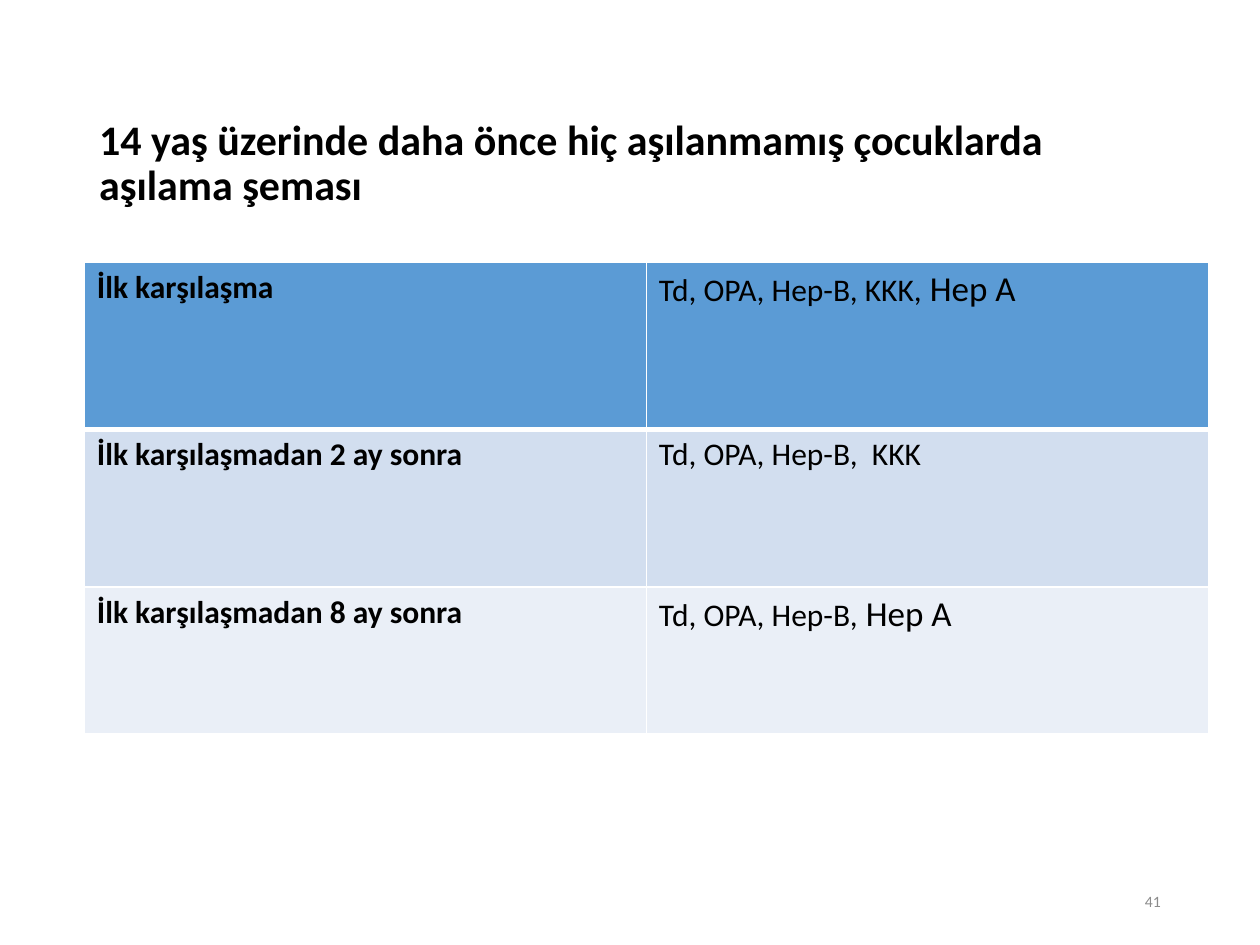
from dataclasses import dataclass

from lxml.etree import SubElement
from pptx import Presentation
from pptx.dml.color import RGBColor
from pptx.enum.text import MSO_ANCHOR, PP_ALIGN
from pptx.oxml.ns import qn
from pptx.util import Cm, Pt


@dataclass(frozen=True)
class Theme:
    """Colours, font and type sizes of the slide."""
    font: str = "Calibri"
    ink: str = "000000"
    muted: str = "8C8C8C"
    rule: str = "FFFFFF"
    row_fills: tuple = ("5B9BD5", "D2DEEF", "EAEFF7")
    title: int = 24
    body: int = 18
    emphasis: int = 20
    footer: int = 9
    thin: int = 1
    thick: int = 3


@dataclass(frozen=True)
class Box:
    """A rectangle in centimetres."""
    left: float
    top: float
    width: float
    height: float

    def lengths(self):
        """Return the four sides as slide lengths."""
        return Cm(self.left), Cm(self.top), Cm(self.width), Cm(self.height)


THEME = Theme()
SCHEDULE = [
    ("İlk karşılaşma", "Td, OPA, Hep-B, KKK,", " Hep A"),
    ("İlk karşılaşmadan 2 ay sonra", "Td, OPA, Hep-B,  KKK", ""),
    ("İlk karşılaşmadan 8 ay sonra", "Td, OPA, Hep-B,", " Hep A"),
]
ROW_HEIGHTS = (3.38, 3.17, 2.97)


def add_run(paragraph, wording, size, color=THEME.ink, bold=False):
    """Append one styled run to a paragraph."""
    run = paragraph.add_run()
    run.text = wording
    run.font.name = THEME.font
    run.font.size = Pt(size)
    run.font.bold = bold
    run.font.color.rgb = RGBColor.from_string(color)


def add_frame(slide, box):
    """Add a wrapping, vertically centred text frame."""
    frame = slide.shapes.add_textbox(*box.lengths()).text_frame
    frame.word_wrap = True
    frame.vertical_anchor = MSO_ANCHOR.MIDDLE
    return frame


def rule_cell(cell, top, bottom):
    """Draw the four borders of a cell, given its top and bottom widths."""
    properties = cell._tc.get_or_add_tcPr()
    widths = {"a:lnL": THEME.thin, "a:lnR": THEME.thin, "a:lnT": top, "a:lnB": bottom}
    for position, (side, width) in enumerate(widths.items()):
        line = SubElement(properties, qn(side), w=str(Pt(width)))
        SubElement(SubElement(line, qn("a:solidFill")), qn("a:srgbClr"), val=THEME.rule)
        properties.insert(position, line)


def add_title(slide, box):
    """Place the heading slightly below the middle of its box."""
    frame = add_frame(slide, box)
    frame.margin_top = Cm(1.04)
    heading = frame.paragraphs[0]
    heading.line_spacing = 0.9
    add_run(heading, "14 yaş üzerinde daha önce hiç aşılanmamış çocuklarda aşılama şeması",
            THEME.title, bold=True)


def add_schedule(slide, box):
    """Place the vaccination table with one row per visit."""
    table = slide.shapes.add_table(len(SCHEDULE), 2, *box.lengths()).table
    for column in table.columns:
        column.width = Cm(box.width / 2)
    for index, (visit, vaccines, extra) in enumerate(SCHEDULE):
        table.rows[index].height = Cm(ROW_HEIGHTS[index])
        visit_cell, vaccine_cell = table.cell(index, 0), table.cell(index, 1)
        for cell in (visit_cell, vaccine_cell):
            cell.fill.solid()
            cell.fill.fore_color.rgb = RGBColor.from_string(THEME.row_fills[index])
            rule_cell(cell, THEME.thick if index == 1 else THEME.thin,
                      THEME.thick if index == 0 else THEME.thin)
        add_run(visit_cell.text_frame.paragraphs[0], visit, THEME.body, bold=True)
        add_run(vaccine_cell.text_frame.paragraphs[0], vaccines, THEME.body)
        if extra:
            add_run(vaccine_cell.text_frame.paragraphs[0], extra, THEME.emphasis)


def add_page_number(slide, box):
    """Place the right-aligned page number."""
    number = add_frame(slide, box).paragraphs[0]
    number.alignment = PP_ALIGN.RIGHT
    add_run(number, "41", THEME.footer, THEME.muted)


def main():
    """Build and save the slide."""
    deck = Presentation()
    deck.slide_width, deck.slide_height = Cm(25.4), Cm(19.05)
    slide = deck.slides.add_slide(deck.slide_layouts[6])
    add_title(slide, Box(1.75, 1.02, 21.9, 3.68))
    add_schedule(slide, Box(1.7, 5.28, 22.66, sum(ROW_HEIGHTS)))
    add_page_number(slide, Box(17.93, 17.65, 5.72, 1.02))
    deck.save("out.pptx")


if __name__ == "__main__":
    main()
